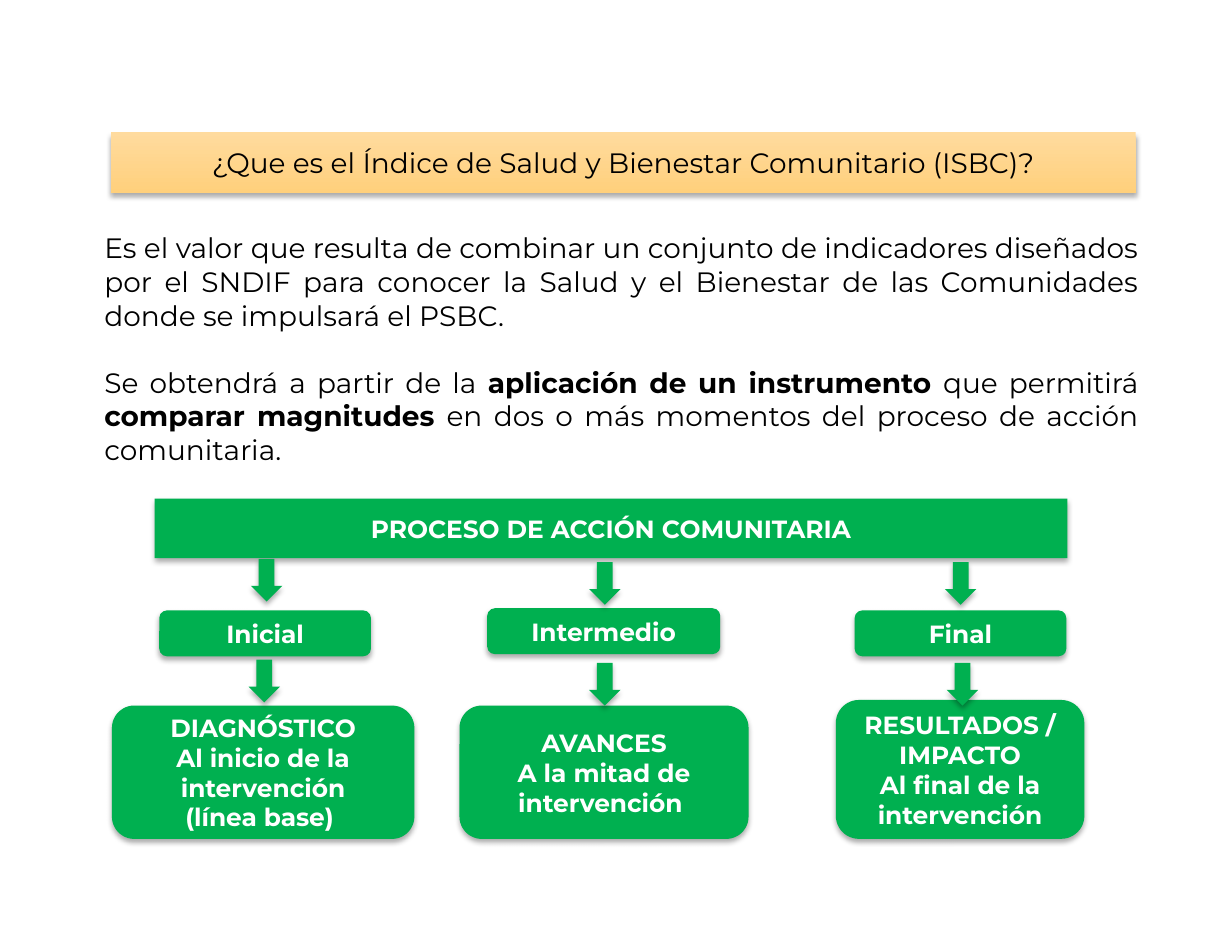
import pptx
import pptx.util
import pptx.dml.color
import pptx.enum.shapes
import pptx.enum.text
import pptx.oxml
import pptx.oxml.ns

Pt = pptx.util.Pt
RGB = pptx.dml.color.RGBColor.from_string
MSO = pptx.enum.shapes.MSO_SHAPE
ALIGN = pptx.enum.text.PP_ALIGN
MIDDLE = pptx.enum.text.MSO_ANCHOR.MIDDLE

COLORS = {
    "green": "00B050",
    "white": "FFFFFF",
    "black": "000000",
    "sand_light": "FFDB9E",
    "sand_dark": "FFD07C",
}
FONT = "Montserrat"

SHADOW = (
    f'<a:effectLst {pptx.oxml.ns.nsdecls("a")}>'
    '<a:outerShdw blurRad="44450" dist="27940" dir="5400000" rotWithShape="0">'
    f'<a:srgbClr val="{COLORS["black"]}"><a:alpha val="32000"/></a:srgbClr>'
    '</a:outerShdw></a:effectLst>'
)

prs = pptx.Presentation()
prs.slide_width, prs.slide_height = Pt(792), Pt(612)
s = prs.slides.add_slide(prs.slide_layouts[6])


def add_text(p, text, size, color, bold=False):
    r = p.add_run()
    r.text = text
    r.font.name = FONT
    r.font.size = Pt(size)
    r.font.bold = bold
    r.font.color.rgb = RGB(COLORS[color])


def add_block(kind, x, y, w, h, lines=()):
    """Green shape with a soft shadow and bold white centred lines."""
    sp = s.shapes.add_shape(kind, Pt(x), Pt(y), Pt(w), Pt(h))
    sp.fill.solid()
    sp.fill.fore_color.rgb = RGB(COLORS["green"])
    sp.line.fill.background()
    sp._element.spPr.append(pptx.oxml.parse_xml(SHADOW))
    tf = sp.text_frame
    tf.word_wrap = True
    tf.vertical_anchor = MIDDLE
    for i, line in enumerate(lines):
        p = tf.add_paragraph() if i else tf.paragraphs[0]
        p.alignment = ALIGN.CENTER
        add_text(p, line, 16, "white", True)
    return sp


# Title band
sp = add_block(MSO.RECTANGLE, 71.3, 85, 658.8, 38.9)
sp.fill.gradient()
sp.fill.gradient_angle = 270
for stop, name in zip(sp.fill.gradient_stops, ("sand_light", "sand_dark")):
    stop.color.rgb = RGB(COLORS[name])
    stop.position = 0 if name == "sand_light" else 1
p = sp.text_frame.paragraphs[0]
p.alignment = ALIGN.CENTER
add_text(p, "¿Que es el Índice de Salud y Bienestar Comunitario (ISBC)?", 18, "black")

# Definition
paragraphs = [
    [("Es el valor que resulta de combinar un conjunto de indicadores diseñados "
      "por el SNDIF para conocer la Salud y el Bienestar de las Comunidades "
      "donde se impulsará el PSBC.", False)],
    [("Se obtendrá a partir de la ", False),
     ("aplicación de un instrumento ", True),
     ("que permitirá ", False),
     ("comparar magnitudes ", True),
     ("en dos o más momentos del proceso de acción comunitaria.", False)],
]
tf = s.shapes.add_textbox(Pt(60), Pt(144), Pt(679), Pt(160)).text_frame
tf.word_wrap = True
tf.vertical_anchor = MIDDLE
for i, runs in enumerate(paragraphs):
    p = tf.add_paragraph() if i else tf.paragraphs[0]
    p.alignment = ALIGN.JUSTIFY
    if i:
        p.space_before = Pt(21.5)
    for text, bold in runs:
        add_text(p, text, 18, "black", bold)

# Outcome boxes: x, y, width, height, lines
outcomes = [
    (72, 453.6, 194.4, 85.7,
     ["DIAGNÓSTICO", "Al inicio de la intervención", "(línea base) "]),
    (295.4, 453.6, 185.8, 85.7, ["AVANCES", "A la mitad de intervención "]),
    (537.3, 450, 159.8, 89.3,
     ["RESULTADOS / IMPACTO", "Al final de la intervención"]),
]
for x, y, w, h, lines in outcomes:
    add_block(MSO.ROUNDED_RECTANGLE, x, y, w, h, lines)

# Process bar
add_block(MSO.RECTANGLE, 99.4, 320.6, 586.8, 38.2,
          ["PROCESO DE ACCIÓN COMUNITARIA"])

# Stages: label, x, y, width, then x of upper and lower arrow, y of upper arrow
stages = [
    ("Inicial", 102.4, 392.4, 136.1, 161.3, 159.8, 359.3),
    ("Intermedio", 313.2, 391, 149.8, 378.7, 378.7, 361.4),
    ("Final", 549.4, 392.4, 136.1, 607.5, 608.6, 361.4),
]
for label, x, y, w, upper_x, lower_x, arrow_y in stages:
    add_block(MSO.ROUNDED_RECTANGLE, x, y, w, 29.5, [label])
    add_block(MSO.DOWN_ARROW, upper_x, arrow_y, 20.2, 27.4)
    add_block(MSO.DOWN_ARROW, lower_x, arrow_y + 64.8, 20.2, 27.4)

prs.save("out.pptx")
